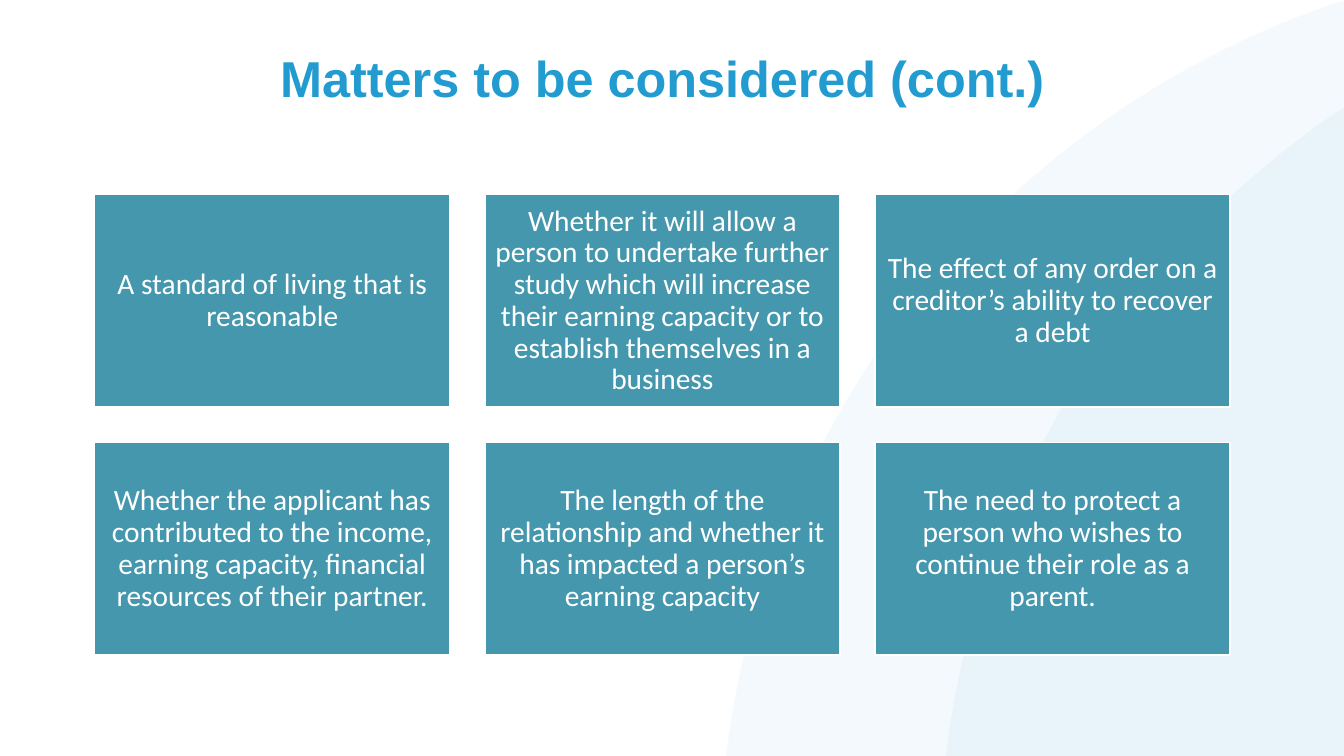
from dataclasses import dataclass

from lxml import etree
from pptx import Presentation
from pptx.dml.color import RGBColor
from pptx.enum.shapes import MSO_SHAPE
from pptx.enum.text import MSO_ANCHOR, MSO_AUTO_SIZE, PP_ALIGN
from pptx.oxml.ns import qn
from pptx.shapes.autoshape import Shape
from pptx.slide import Slide
from pptx.util import Inches, Pt

OVAL = MSO_SHAPE.OVAL
RECTANGLE = MSO_SHAPE.RECTANGLE
TOP = MSO_ANCHOR.TOP
MIDDLE = MSO_ANCHOR.MIDDLE
CENTER = PP_ALIGN.CENTER
NO_AUTO_SIZE = MSO_AUTO_SIZE.NONE
TITLE_ONLY = 5

BLUE = "229CD0"
TEAL = "4597AD"
WHITE = "FFFFFF"

LEFT_MARGIN = 0.94
CARDS_TOP = 1.93
CARD_WIDTH = 3.52
CARD_HEIGHT = 2.11
CARD_GAP = 0.35
COLUMNS = 3
CIRCLE_TOP = -0.45
CIRCLE_SIZE = 18.02
CIRCLE_LEFTS = (7.14, 9.32)

MATTERS = (
    "A standard of living that is reasonable",
    "Whether it will allow a person to undertake further study which will "
    "increase their earning capacity or to establish themselves in a business",
    "The effect of any order on a creditor’s ability to recover a debt",
    "Whether the applicant has contributed to the income, earning capacity, "
    "financial resources of their partner.",
    "The length of the relationship and whether it has impacted a person’s "
    "earning capacity",
    "The need to protect a person who wishes to continue their role as a parent.",
)


@dataclass(frozen=True)
class TextStyle:
    font: str
    size: float
    color: str
    bold: bool
    anchor: MSO_ANCHOR


@dataclass(frozen=True)
class Card:
    text: str
    left: float
    top: float


TITLE_STYLE = TextStyle("Arial", 36, BLUE, True, TOP)
CARD_STYLE = TextStyle("Calibri", 21, WHITE, False, MIDDLE)


def color(value: str) -> RGBColor:
    return RGBColor.from_string(value)


def write_text(shape: Shape, text: str, style: TextStyle) -> None:
    frame = shape.text_frame
    frame.word_wrap = True
    frame.auto_size = NO_AUTO_SIZE
    frame.vertical_anchor = style.anchor
    paragraph = frame.paragraphs[0]
    paragraph.alignment = CENTER
    paragraph.line_spacing = 0.9
    run = paragraph.add_run()
    run.text = text
    run.font.name = style.font
    run.font.size = Pt(style.size)
    run.font.bold = style.bold
    run.font.color.rgb = color(style.color)


def add_circle(slide: Slide, left: float) -> None:
    circle = slide.shapes.add_shape(
        OVAL, Inches(left), Inches(CIRCLE_TOP), Inches(CIRCLE_SIZE), Inches(CIRCLE_SIZE)
    )
    circle.shadow.inherit = False
    circle.line.fill.background()
    circle.fill.solid()
    circle.fill.fore_color.rgb = color(BLUE)
    fill_color = circle.element.spPr.find(qn("a:solidFill")).find(qn("a:srgbClr"))
    etree.SubElement(fill_color, qn("a:alpha"), val="5000")


def add_title(slide: Slide, text: str) -> None:
    title = slide.shapes.title
    title.left, title.top = Inches(LEFT_MARGIN), Inches(0.49)
    title.width, title.height = Inches(11.26), Inches(0.97)
    write_text(title, text, TITLE_STYLE)
    slide.shapes.element.append(title.element)


def add_card(slide: Slide, card: Card) -> None:
    shape = slide.shapes.add_shape(
        RECTANGLE, Inches(card.left), Inches(card.top), Inches(CARD_WIDTH), Inches(CARD_HEIGHT)
    )
    shape.shadow.inherit = False
    shape.fill.solid()
    shape.fill.fore_color.rgb = color(TEAL)
    shape.line.color.rgb = color(WHITE)
    shape.line.width = Pt(1)
    frame = shape.text_frame
    frame.margin_left = frame.margin_right = Inches(0.09)
    frame.margin_top = frame.margin_bottom = Inches(0.09)
    write_text(shape, card.text, CARD_STYLE)


def main() -> None:
    presentation = Presentation()
    presentation.slide_width = Inches(13.33)
    presentation.slide_height = Inches(7.5)
    slide = presentation.slides.add_slide(presentation.slide_layouts[TITLE_ONLY])
    for left in CIRCLE_LEFTS:
        add_circle(slide, left)
    add_title(slide, "Matters to be considered (cont.)")
    for index, text in enumerate(MATTERS):
        row, column = divmod(index, COLUMNS)
        left = LEFT_MARGIN + column * (CARD_WIDTH + CARD_GAP)
        top = CARDS_TOP + row * (CARD_HEIGHT + CARD_GAP)
        add_card(slide, Card(text, left, top))
    presentation.save("out.pptx")


if __name__ == "__main__":
    main()
